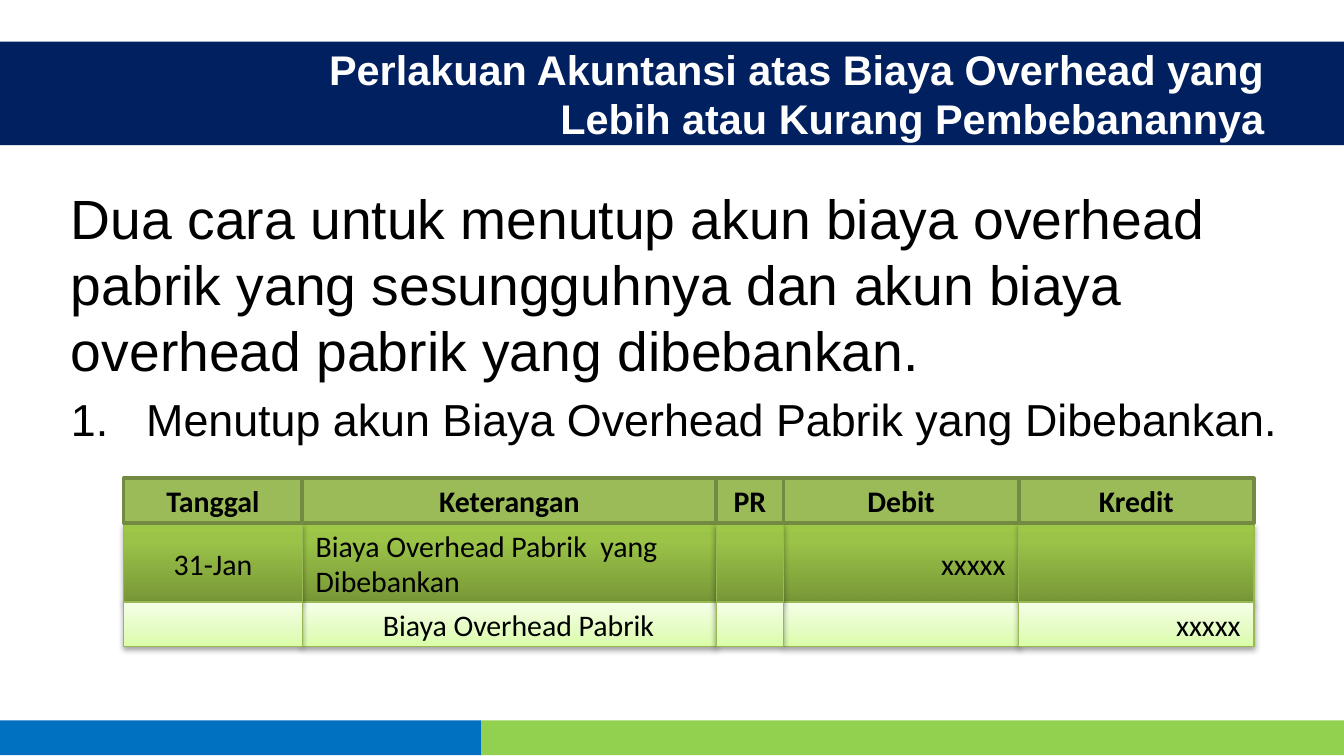
from dataclasses import dataclass
from itertools import accumulate

from lxml import etree
from pptx import Presentation
from pptx.dml.color import RGBColor
from pptx.enum import shapes, text
from pptx.oxml import ns
from pptx.util import Inches, Pt

LEFT, CENTER, RIGHT = text.PP_ALIGN.LEFT, text.PP_ALIGN.CENTER, text.PP_ALIGN.RIGHT


@dataclass(frozen=True)
class Theme:
    navy: str = "002060"
    blue: str = "0070C0"
    lime: str = "92D050"
    white: str = "FFFFFF"
    black: str = "000000"
    header_fill: str = "9BBB59"
    header_line: str = "738A42"
    cell_line: str = "98B955"
    dark_stops: tuple = ((0, "779737"), (80, "9BC348"), (100, "9DC746"))
    light_stops: tuple = ((0, "DAFDA7"), (35, "E4FCC2"), (100, "F5FFE7"))
    heading_font: str = "Arial"
    table_font: str = "Calibri"
    title_size: float = 22.2
    lead_size: float = 29.6
    item_size: float = 24
    table_size: float = 16


def add_xml(parent, tag, **attributes):
    return etree.SubElement(parent, ns.qn(tag), attributes)


def write(para, words, *, font, size, color, bold=False, align=LEFT, indent=0, before=0):
    para.alignment = align
    if indent:
        para._p.get_or_add_pPr().set("marL", str(Inches(indent)))
    if before:
        para.space_before = Pt(before)
    span = para.add_run()
    span.text = words
    span.font.name = font
    span.font.size = Pt(size)
    span.font.bold = bold
    span.font.color.rgb = RGBColor.from_string(color)


class Builder:
    def __init__(self, page, theme):
        self.page = page
        self.theme = theme

    def rectangle(self, left, top, width, height, fill):
        box = self.page.shapes.add_shape(
            shapes.MSO_SHAPE.RECTANGLE,
            Inches(left), Inches(top), Inches(width), Inches(height))
        box.shadow.inherit = False
        box.line.fill.background()
        box.fill.solid()
        box.fill.fore_color.rgb = RGBColor.from_string(fill)
        return box

    def text_box(self, left, top, width, height, anchor):
        box = self.page.shapes.add_textbox(
            Inches(left), Inches(top), Inches(width), Inches(height))
        box.text_frame.word_wrap = True
        box.text_frame.vertical_anchor = anchor
        return box.text_frame

    def outline(self, box, color, width):
        box.line.color.rgb = RGBColor.from_string(color)
        box.line.width = Pt(width)

    def shade(self, box, stops):
        """Fill upwards through the stops and set a soft shadow below."""
        box.fill.gradient()
        box.fill.gradient_angle = 90
        stop_list = box._element.spPr.find(ns.qn("a:gradFill")).find(ns.qn("a:gsLst"))
        for old in list(stop_list):
            stop_list.remove(old)
        for position, color in stops:
            stop = add_xml(stop_list, "a:gs", pos=str(position * 1000))
            add_xml(stop, "a:srgbClr", val=color)
        effects = box._element.spPr.find(ns.qn("a:effectLst"))
        shadow = add_xml(effects, "a:outerShdw", blurRad=str(Pt(3.1)),
                         dist=str(Pt(1.7)), dir="5400000", rotWithShape="0")
        color = add_xml(shadow, "a:srgbClr", val=self.theme.black)
        add_xml(color, "a:alpha", val="36000")

    def cell(self, place, words, *, stops=None, align=LEFT, indent=0):
        """Draw a journal cell; one without gradient stops is a header."""
        theme = self.theme
        box = self.rectangle(*place, fill=theme.header_fill)
        if stops:
            self.shade(box, stops)
            self.outline(box, theme.cell_line, 0.75)
        else:
            self.outline(box, theme.header_line, 2)
        if words:
            frame = box.text_frame
            frame.word_wrap = True
            frame.vertical_anchor = text.MSO_ANCHOR.MIDDLE
            write(frame.paragraphs[0], words, font=theme.table_font,
                  size=theme.table_size, color=theme.black, bold=not stops,
                  align=align, indent=indent)

    def journal(self, left, widths, rows):
        lefts = list(accumulate(widths, initial=left))
        # Later columns cover the side shadows of earlier ones.
        for column in (1, 3, 4, 0, 2):
            for top, height, stops, words, indent in rows:
                align = (CENTER, LEFT, CENTER, RIGHT, RIGHT)[column] if stops else CENTER
                self.cell((lefts[column], top, widths[column], height), words[column],
                          stops=stops, align=align, indent=indent if column == 1 else 0)


def main():
    theme = Theme()
    deck = Presentation()
    deck.slide_width, deck.slide_height = Inches(10), Inches(5.625)
    page = deck.slides.add_slide(deck.slide_layouts[6])
    builder = Builder(page, theme)

    builder.rectangle(0, 5.36, 3.58, 0.26, theme.blue)
    builder.rectangle(3.58, 5.36, 6.42, 0.26, theme.lime)
    builder.rectangle(0, 0.31, 10, 0.77, theme.navy)

    title = builder.text_box(1.66, 0.31, 7.85, 0.77, text.MSO_ANCHOR.MIDDLE)
    write(title.paragraphs[0],
          "Perlakuan Akuntansi atas Biaya Overhead yang Lebih atau Kurang Pembebanannya",
          font=theme.heading_font, size=theme.title_size, color=theme.white,
          bold=True, align=RIGHT)

    body = builder.text_box(0.43, 1.32, 9.24, 2.16, text.MSO_ANCHOR.TOP)
    write(body.paragraphs[0],
          "Dua cara untuk menutup akun biaya overhead pabrik yang sesungguhnya "
          "dan akun biaya overhead pabrik yang dibebankan.",
          font=theme.heading_font, size=theme.lead_size, color=theme.black)
    item = body.add_paragraph()
    write(item, "Menutup akun Biaya Overhead Pabrik yang Dibebankan.",
          font=theme.heading_font, size=theme.item_size, color=theme.black,
          indent=0.56, before=5)
    properties = item._p.get_or_add_pPr()
    properties.set("indent", str(Inches(-0.56)))
    add_xml(properties, "a:buFont", typeface=theme.heading_font)
    add_xml(properties, "a:buAutoNum", type="arabicPeriod")

    builder.journal(0.92, (1.33, 3.08, 0.5, 1.75, 1.75), (
        (3.9, 0.58, theme.dark_stops,
         ("31-Jan", "Biaya Overhead Pabrik  yang Dibebankan", "", "xxxxx", ""), 0),
        (4.48, 0.33, theme.light_stops,
         ("", "Biaya Overhead Pabrik", "", "", "xxxxx"), 0.5),
        (3.56, 0.33, None,
         ("Tanggal", "Keterangan", "PR", "Debit", "Kredit"), 0),
    ))
    deck.save("out.pptx")


if __name__ == "__main__":
    main()
